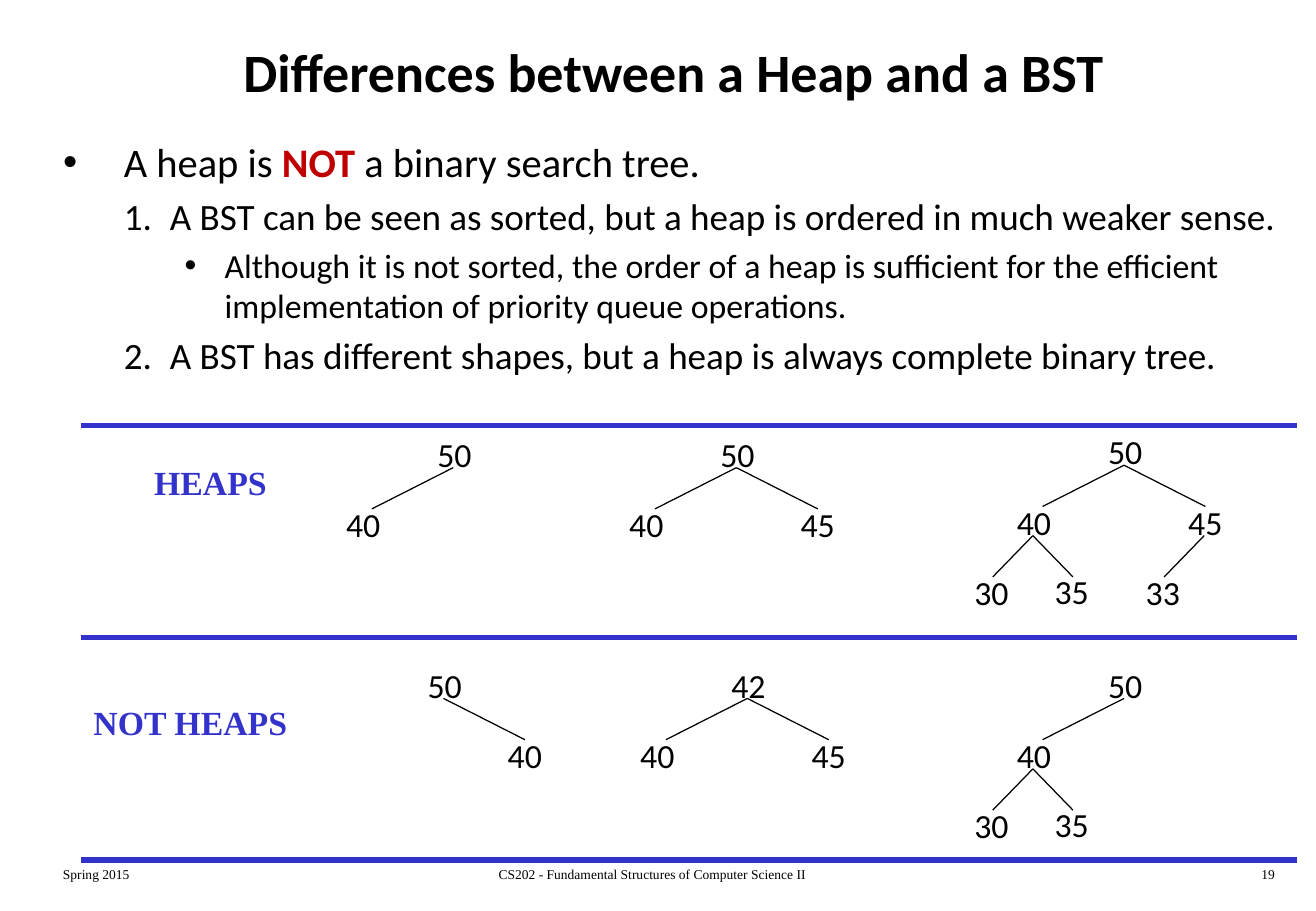
from lxml.etree import SubElement
from pptx import Presentation
from pptx.dml.color import RGBColor as Rgb
from pptx.enum.shapes import MSO_CONNECTOR as Link
from pptx.enum.text import MSO_ANCHOR as Anchor, PP_ALIGN as Align
from pptx.oxml.ns import qn
from pptx.util import Inches, Pt

COLORS = {"ink": "000000", "blue": "3333CC", "red": "C00000"}
SANS, SERIF = "Calibri", "Times New Roman"

HEAPS = [
    (3.5, 3.52, (50, (40,), None)),
    (5.83, 3.52, (50, (40,), (45,))),
    (9.02, 3.5, (50, (40, (30,), (35,)), (45, (33,), None))),
]
OTHERS = [
    (3.42, 5.42, (50, None, (40,))),
    (5.92, 5.42, (42, (40,), (45,))),
    (9.02, 5.42, (50, (40, (30,), (35,)), None)),
]
STEPS = [
    ((-0.75, 0.58, -0.67), (0.66, 0.58, 0.67)),
    ((-0.35, 0.58, -0.33), (0.31, 0.57, 0.33)),
]
POINTS = [
    (0, 24, 0.5, -0.5, "•", ["A heap is ", "NOT", " a binary search tree."]),
    (1, 22, 0.88, -0.38, None,
     ["A BST can be seen as sorted, but a heap is ordered in much weaker sense."]),
    (2, 20, 1.33, -0.33, "•",
     ["Although it is not sorted, the order of a heap is sufficient for the "
      "efficient implementation of priority queue operations."]),
    (1, 22, 0.88, -0.38, None,
     ["A BST has different shapes, but a heap is always complete binary tree."]),
]


def style(para, size, face=SANS, color="ink", bold=False):
    font = para.font
    font.size, font.name, font.bold = Pt(size), face, bold
    font.color.rgb = Rgb.from_string(COLORS[color])


def add_text(slide, text, x, y, w, h, size, face=SANS, color="ink",
             bold=False, align=Align.LEFT, wrap=False):
    frame = slide.shapes.add_textbox(
        Inches(x), Inches(y), Inches(w), Inches(h)).text_frame
    frame.word_wrap = wrap
    para = frame.paragraphs[0]
    para.text, para.alignment = text, align
    style(para, size, face, color, bold)


def add_line(slide, x1, y1, x2, y2, color="ink", width=0.75):
    line = slide.shapes.add_connector(
        Link.STRAIGHT, Inches(x1), Inches(y1), Inches(x2), Inches(y2))
    line.line.color.rgb = Rgb.from_string(COLORS[color])
    line.line.width = Pt(width)
    SubElement(line._element.spPr, qn("a:effectLst"))


def add_tree(slide, x, y, node, depth=0):
    value, *kids = node
    add_text(slide, str(value), x, y, 0.48, 0.44, 20)
    for kid, step in zip(kids, STEPS[min(depth, 1)]):
        if kid:
            dx, dy, run = step
            top = y + 0.33
            add_line(slide, x + 0.23, top, x + 0.23 + run, top + 0.34)
            add_tree(slide, x + dx, y + dy, kid, depth + 1)


def add_title(slide, text):
    title = slide.shapes.title
    title.left, title.top = Inches(0.42), Inches(0.17)
    title.width, title.height = Inches(10.25), Inches(0.83)
    frame = title.text_frame
    frame.text, frame.vertical_anchor = text, Anchor.MIDDLE
    para = frame.paragraphs[0]
    para.alignment = Align.CENTER
    style(para, 32, bold=True)


def add_body(slide):
    frame = slide.shapes.add_textbox(
        Inches(0.42), Inches(1.08), Inches(10.42), Inches(2.35)).text_frame
    frame.word_wrap = True
    for i, (level, size, left, hang, mark, parts) in enumerate(POINTS):
        para = frame.add_paragraph() if i else frame.paragraphs[0]
        para.level, para.space_before = level, Pt(size * 0.2)
        props = para._p.get_or_add_pPr()
        props.set("marL", str(Inches(left)))
        props.set("indent", str(Inches(hang)))
        if mark:
            SubElement(props, qn("a:buFont"), typeface="Arial")
            SubElement(props, qn("a:buChar"), char=mark)
        else:
            SubElement(props, qn("a:buAutoNum"), type="arabicPeriod")
        style(para, size)
        for part in parts:
            run = para.add_run()
            run.text = part
            if part == "NOT":
                run.font.bold = True
                run.font.color.rgb = Rgb.from_string(COLORS["red"])


def main():
    deck = Presentation()
    deck.slide_width, deck.slide_height = Inches(10.83), Inches(7.5)
    slide = deck.slides.add_slide(deck.slide_layouts[5])
    add_title(slide, "Differences between a Heap and a BST")
    add_body(slide)
    for text, x, y, w in [("HEAPS", 1.17, 3.75, 1.14),
                          ("NOT HEAPS", 0.67, 5.73, 1.81)]:
        add_text(slide, text, x, y, w, 0.44, 20, SERIF, "blue", True)
    for x, y, tree in HEAPS + OTHERS:
        add_tree(slide, x, y, tree)
    for y in (3.5, 5.25, 7.08):
        add_line(slide, 0.67, y, 10.67, y, "blue", 3)
    for text, x, w, align in [
        ("Spring 2015", 0.42, 2.26, Align.LEFT),
        ("CS202 - Fundamental Structures of Computer Science II",
         3.34, 4.06, Align.CENTER),
        ("19", 8.33, 2.26, Align.RIGHT),
    ]:
        add_text(slide, text, x, 7.08, w, 0.25, 8, SERIF, align=align, wrap=True)
    deck.save("out.pptx")


if __name__ == "__main__":
    main()
